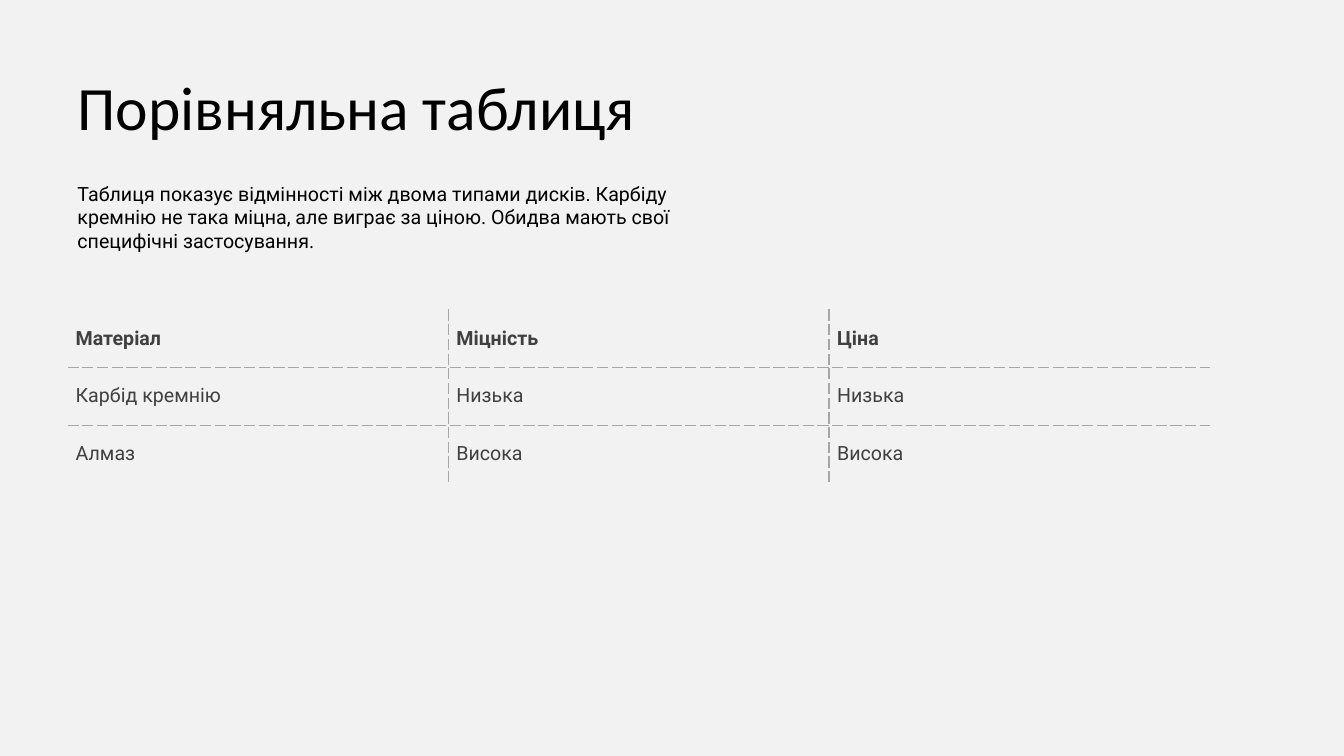
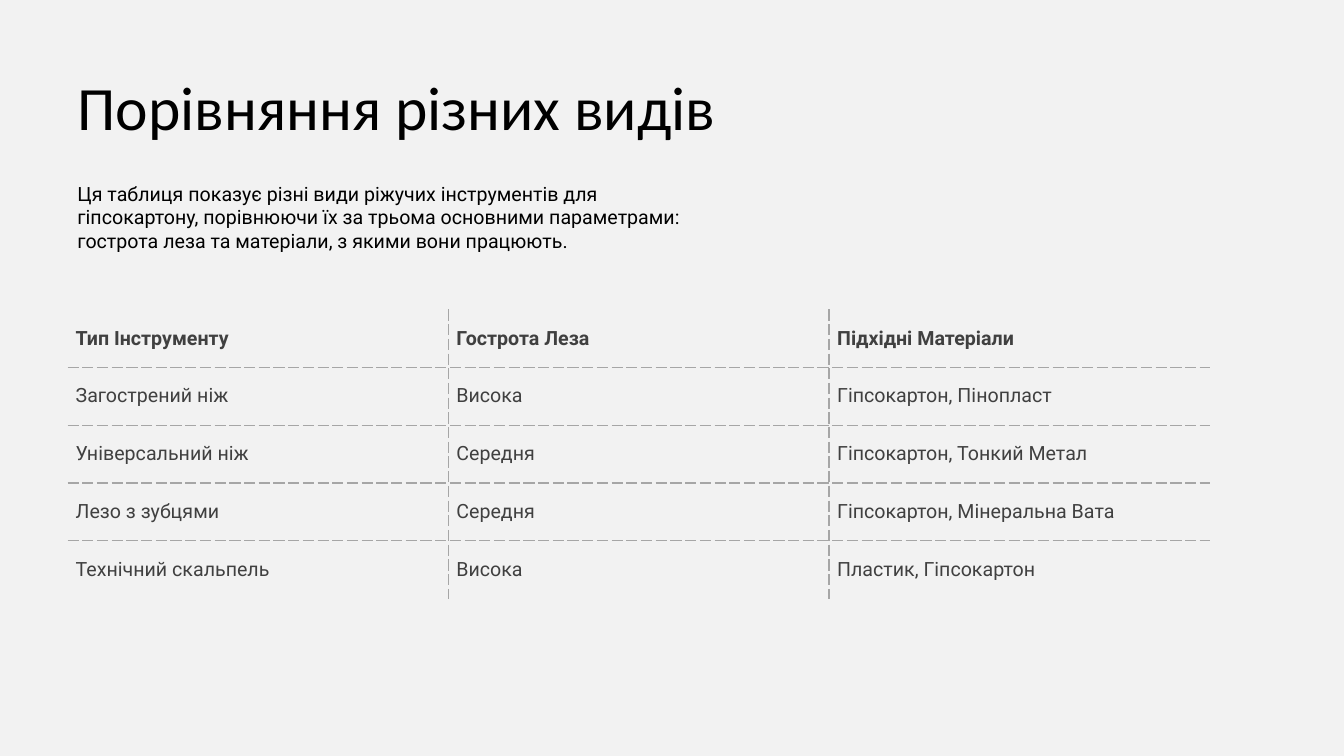
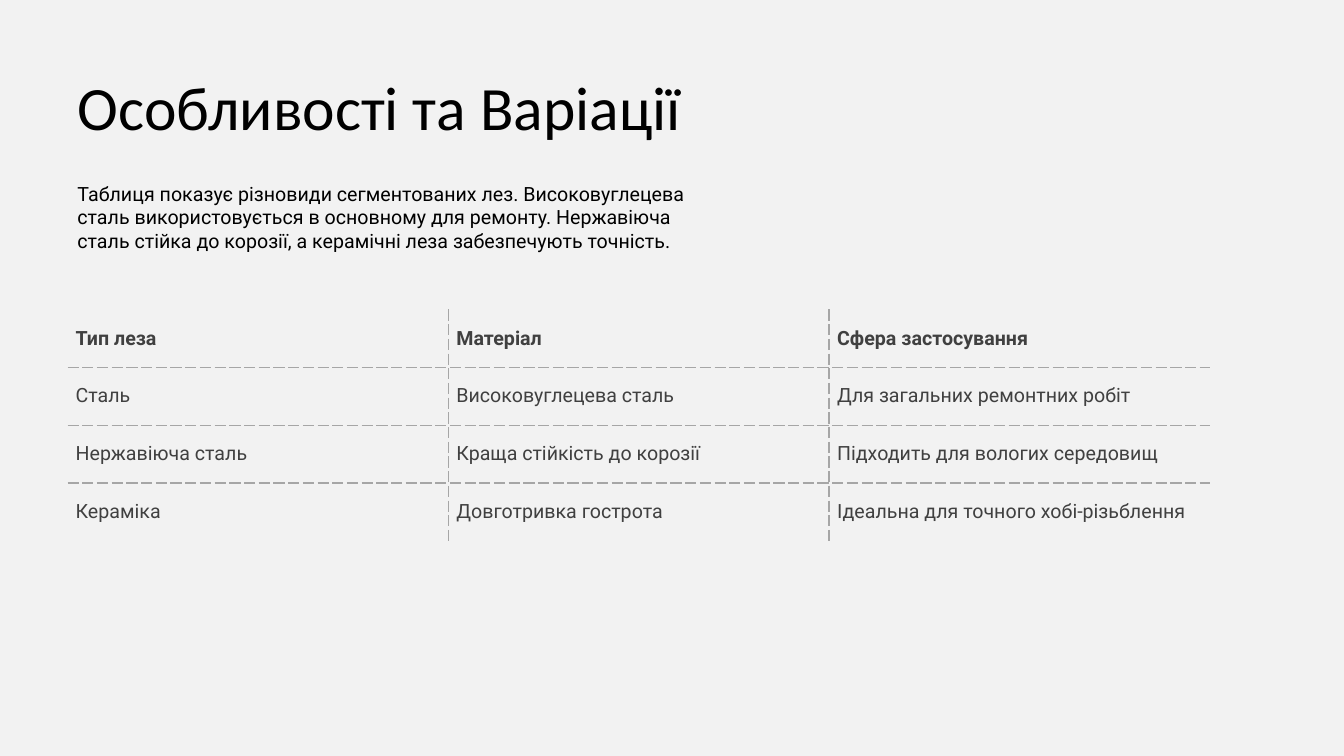
from lxml.etree import SubElement
from pptx import Presentation
from pptx.dml.color import RGBColor
from pptx.enum.text import MSO_ANCHOR
from pptx.oxml.ns import qn
from pptx.util import Inches, Pt

COLORS = {"background": "F2F2F2", "text": "000000", "cell": "404040", "rule": "A6A6A6"}
FORMATS = {
    "title": {"name": "Calibri", "size": Pt(44), "bold": False, "color": "text"},
    "intro": {"name": "Roboto", "size": Pt(14), "bold": False, "color": "text"},
    "header": {"name": "Roboto", "size": Pt(14), "bold": True, "color": "cell"},
    "body": {"name": "Roboto", "size": Pt(14), "bold": False, "color": "cell"},
}

# Boxes are left, top, width, height in inches.
TITLE_BOX = (0.67, 0.39, 12, 1.33)
INTRO_BOX = (0.67, 1.72, 6.6, 0.86)
TABLE_BOX = (0.67, 3.07, 11.33, 2.87)
FULL_ROWS = 5  # number of rows that fill TABLE_BOX
CELL_MARGIN = Inches(0.08)

SLIDES = [
    {
        "title": "Порівняльна таблиця",
        "intro": "Таблиця показує відмінності між двома типами дисків. Карбіду кремнію "
                 "не така міцна, але виграє за ціною. Обидва мають свої специфічні "
                 "застосування.",
        "rows": [
            ("Матеріал", "Міцність", "Ціна"),
            ("Карбід кремнію", "Низька", "Низька"),
            ("Алмаз", "Висока", "Висока"),
        ],
    },
    {
        "title": "Порівняння різних видів",
        "intro": "Ця таблиця показує різні види ріжучих інструментів для гіпсокартону, "
                 "порівнюючи їх за трьома основними параметрами: гострота леза та "
                 "матеріали, з якими вони працюють.",
        "rows": [
            ("Тип Інструменту", "Гострота Леза", "Підхідні Матеріали"),
            ("Загострений ніж", "Висока", "Гіпсокартон, Пінопласт"),
            ("Універсальний ніж", "Середня", "Гіпсокартон, Тонкий Метал"),
            ("Лезо з зубцями", "Середня", "Гіпсокартон, Мінеральна Вата"),
            ("Технічний скальпель", "Висока", "Пластик, Гіпсокартон"),
        ],
    },
    {
        "title": "Особливості та Варіації",
        "intro": "Таблиця показує різновиди сегментованих лез. Високовуглецева сталь "
                 "використовується в основному для ремонту. Нержавіюча сталь стійка до "
                 "корозії, а керамічні леза забезпечують точність.",
        "rows": [
            ("Тип леза", "Матеріал", "Сфера застосування"),
            ("Сталь", "Високовуглецева сталь", "Для загальних ремонтних робіт"),
            ("Нержавіюча сталь", "Краща стійкість до корозії",
             "Підходить для вологих середовищ"),
            ("Кераміка", "Довготривка гострота", "Ідеальна для точного хобі-різьблення"),
        ],
    },
]


def color(name):
    return RGBColor.from_string(COLORS[name])


def write_text(text_frame, text, style):
    paragraph = text_frame.paragraphs[0]
    run = paragraph.add_run()
    run.text = text
    for key, value in FORMATS[style].items():
        if key == "color":
            run.font.color.rgb = color(value)
        else:
            setattr(run.font, key, value)


def add_text(slide, box, text, style):
    shape = slide.shapes.add_textbox(*map(Inches, box))
    shape.text_frame.word_wrap = True
    shape.text_frame.vertical_anchor = MSO_ANCHOR.MIDDLE
    write_text(shape.text_frame, text, style)


def set_borders(cell, inner_sides):
    """Draw dashed rules on the inner sides and clear the outer ones."""
    properties = cell._tc.get_or_add_tcPr()
    for side, is_inner in inner_sides.items():
        line = SubElement(properties, qn(f"a:{side}"), w=str(Pt(1)))
        if is_inner:
            fill = SubElement(line, qn("a:solidFill"))
            SubElement(fill, qn("a:srgbClr"), val=COLORS["rule"])
            SubElement(line, qn("a:prstDash"), val="sysDash")
        else:
            SubElement(line, qn("a:noFill"))


def add_comparison_table(slide, box, rows):
    left, top, width, height = map(Inches, box)
    row_height = height // FULL_ROWS
    row_count, column_count = len(rows), len(rows[0])
    table = slide.shapes.add_table(
        row_count, column_count, left, top, width, row_height * row_count).table
    table.horz_banding = False
    for row_index, row in enumerate(rows):
        for column_index, text in enumerate(row):
            cell = table.cell(row_index, column_index)
            set_borders(cell, {
                "lnL": column_index > 0,
                "lnR": column_index < column_count - 1,
                "lnT": row_index > 0,
                "lnB": row_index < row_count - 1,
            })
            cell.fill.background()
            cell.vertical_anchor = MSO_ANCHOR.MIDDLE
            for side in ("left", "right", "top", "bottom"):
                setattr(cell, f"margin_{side}", CELL_MARGIN)
            write_text(cell.text_frame, text, "body" if row_index else "header")


def add_table_slide(presentation, content):
    slide = presentation.slides.add_slide(presentation.slide_layouts[6])
    add_comparison_table(slide, TABLE_BOX, content["rows"])
    add_text(slide, TITLE_BOX, content["title"], "title")
    add_text(slide, INTRO_BOX, content["intro"], "intro")


def main():
    presentation = Presentation()
    presentation.slide_width = Inches(13.33)
    presentation.slide_height = Inches(7.5)
    background = presentation.slide_master.background.fill
    background.solid()
    background.fore_color.rgb = color("background")
    for content in SLIDES:
        add_table_slide(presentation, content)
    presentation.save("out.pptx")


if __name__ == "__main__":
    main()
